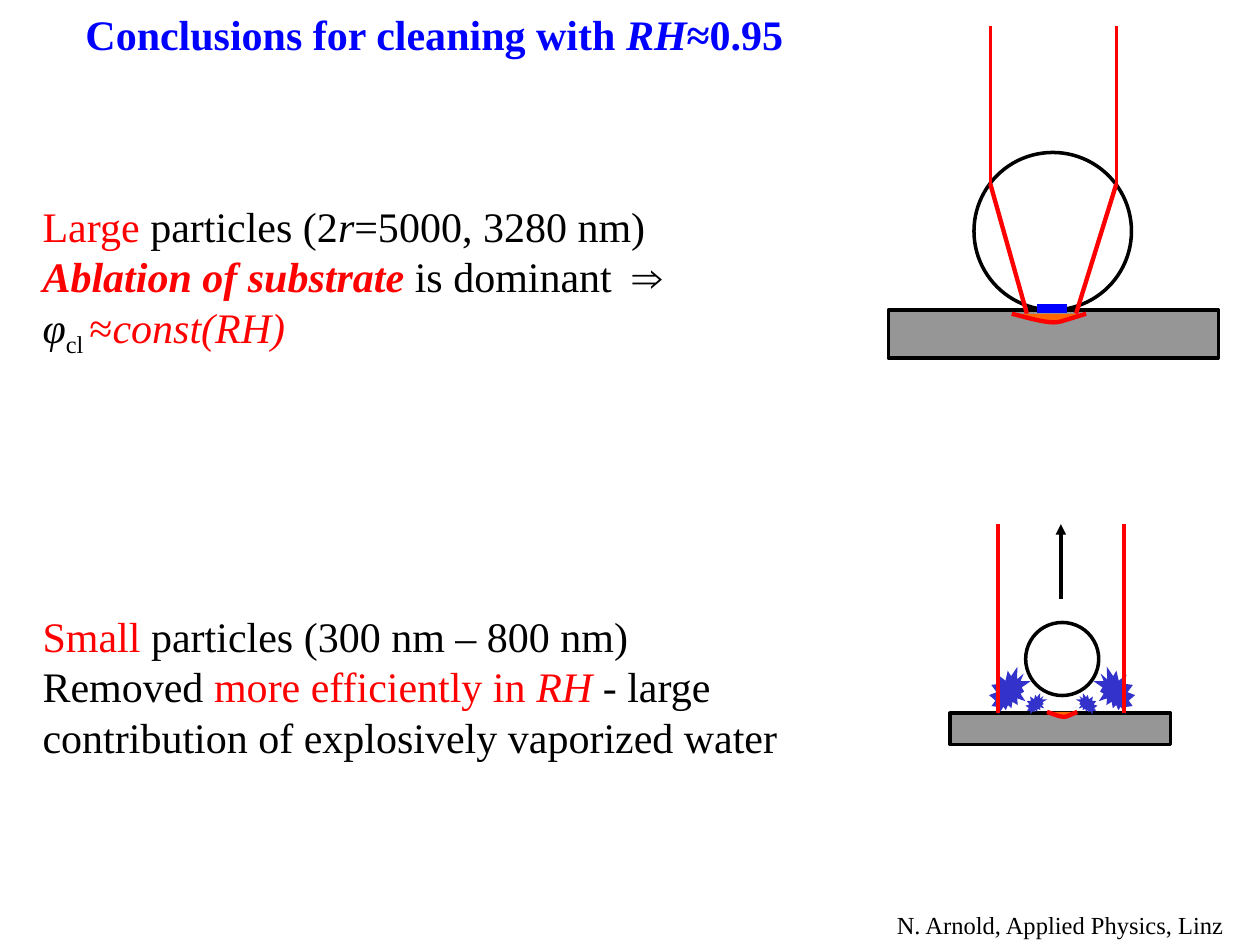
from lxml.etree import SubElement
from pptx import Presentation
from pptx.dml.color import RGBColor
from pptx.enum.shapes import MSO_CONNECTOR, MSO_SHAPE
from pptx.enum.text import PP_ALIGN
from pptx.oxml.ns import qn
from pptx.util import Inches, Pt

BLACK = RGBColor(0x00, 0x00, 0x00)
RED = RGBColor(0xFF, 0x00, 0x00)
BLUE = RGBColor(0x00, 0x00, 0xFF)
GREY = RGBColor(0x96, 0x96, 0x96)
ORANGE = RGBColor(0xFF, 0x66, 0x00)
WATER = RGBColor(0x33, 0x33, 0xCC)
FONT = "Times New Roman"

# A run is (text, colour, style): b bold, i italic, s subscript
TITLE = [[("Conclusions for cleaning with ", BLUE, "b"), ("RH", BLUE, "bi"), ("≈0.95", BLUE, "b")]]
FOOTER = [[("N. Arnold, Applied Physics, Linz", BLACK, "")]]
BODY = [
    [("Large", RED, ""), (" particles (2", BLACK, ""), ("r", BLACK, "i"),
     ("=5000, 3280 nm)", BLACK, "")],
    [("Ablation of substrate", RED, "bi"), (" is dominant  ⇒", BLACK, "")],
    [("φ", BLACK, "i"), ("cl ", BLACK, "s"), ("≈", RED, ""), ("const(RH)", RED, "i")],
    [("Small", RED, ""), (" particles (300 nm – 800 nm)", BLACK, "")],
    [("Removed ", BLACK, ""), ("more efficiently in ", RED, ""), ("RH", RED, "i"),
     (" - large contribution of explosively vaporized water", BLACK, "")],
]
SMALL_PARTICLES = 3  # paragraph that opens the second block

# Crater outline as shares of its width and depth: start, then Bézier segments
CRATER = [(0, 0), (0.19, 0.4), (0.37, 0.85), (0.51, 0.95), (0.63, 1.05), (0.68, 0.8),
          (0.75, 0.65), (0.83, 0.45), (0.92, 0.2), (1, 0)]

prs = Presentation()
prs.slide_width, prs.slide_height = Inches(10), Inches(7.5)
s = prs.slides.add_slide(prs.slide_layouts[6])


def text(paragraphs, x, y, w, h, size, align=PP_ALIGN.LEFT, wrap=True):
    tf = s.shapes.add_textbox(Inches(x), Inches(y), Inches(w), Inches(h)).text_frame
    tf.word_wrap = wrap
    for i, runs in enumerate(paragraphs):
        p = tf.paragraphs[0] if i == 0 else tf.add_paragraph()
        p.alignment = align
        p.font.size, p.font.name = Pt(size), FONT
        for words, colour, style in runs:
            r = p.add_run()
            r.text = words
            r.font.size, r.font.name = Pt(size), FONT
            r.font.color.rgb = colour
            r.font.bold, r.font.italic = "b" in style, "i" in style
            if "s" in style:
                r.font._element.set("baseline", "-25000")
    return tf


def paint(sp, fill=None, line=None, width=2):
    sp.shadow.inherit = False
    if fill is None:
        sp.fill.background()
    else:
        sp.fill.solid()
        sp.fill.fore_color.rgb = fill
    if line is None:
        sp.line.fill.background()
    else:
        sp.line.color.rgb, sp.line.width = line, Pt(width)


def shape(kind, x, y, w, h, fill=None, line=None, flip=False):
    sp = s.shapes.add_shape(kind, Inches(x), Inches(y), Inches(w), Inches(h))
    paint(sp, fill, line)
    if flip:
        sp._element.spPr.find(qn("a:xfrm")).set("flipH", "1")


def line(x1, y1, x2, y2, colour=RED, width=2, arrow=False):
    c = s.shapes.add_connector(MSO_CONNECTOR.STRAIGHT, Inches(x1), Inches(y1), Inches(x2), Inches(y2))
    c.line.color.rgb, c.line.width = colour, Pt(width)
    if arrow:
        SubElement(c.line._get_or_add_ln(), qn("a:tailEnd"), type="triangle")
    SubElement(c._element.spPr, qn("a:effectLst"))


def crater(x, y, w, depth, steps=8):
    """Molten pit in the substrate, traced along its Bézier segments."""
    points = []
    for i in range(0, len(CRATER) - 1, 3):
        for t in (n / steps for n in range(1, steps + 1)):
            weights = ((1 - t) ** 3, 3 * t * (1 - t) ** 2, 3 * t * t * (1 - t), t ** 3)
            u, v = (sum(k * q[axis] for k, q in zip(weights, CRATER[i:i + 4])) for axis in (0, 1))
            points.append((Inches(x + u * w), Inches(y + v * depth)))
    fb = s.shapes.build_freeform(Inches(x), Inches(y))
    fb.add_line_segments(points, close=False)
    paint(fb.convert_to_shape(), ORANGE, RED, 2.5)


text(FOOTER, 6.83, 7.17, 3.17, 0.25, 14, PP_ALIGN.CENTER)
text(TITLE, 0.58, 0.02, 5.74, 0.5, 24, wrap=False)
body = text(BODY, 0.24, 1.54, 6.67, 4.49, 24)
body.paragraphs[SMALL_PARTICLES].space_before = Pt(144)

# Large particle: the sphere focuses the beam into the substrate
shape(MSO_SHAPE.OVAL, 7.73, 1.21, 1.25, 1.25, line=BLACK)
shape(MSO_SHAPE.RECTANGLE, 7.05, 2.46, 2.62, 0.38, GREY, BLACK)
for beam, focus in ((7.86, 8.15), (8.86, 8.54)):
    line(beam, 0.21, beam, 1.46)
    line(beam, 1.46, focus, 2.49, width=2.5)
line(8.23, 2.45, 8.47, 2.45, BLUE, 5)
crater(8.03, 2.49, 0.59, 0.07)

# Small particle: vaporized water lifts it off
shape(MSO_SHAPE.RECTANGLE, 7.54, 5.66, 1.75, 0.25, GREY, BLACK)
shape(MSO_SHAPE.OVAL, 8.14, 4.94, 0.58, 0.58, line=BLACK)
line(8.42, 4.75, 8.42, 4.16, BLACK, arrow=True)
for left, right, y, w, h in ((7.85, 8.68, 5.29, 0.33, 0.38), (8.14, 8.54, 5.5, 0.17, 0.17)):
    shape(MSO_SHAPE.EXPLOSION2, left, y, w, h, WATER)
    shape(MSO_SHAPE.EXPLOSION2, right, y, w, h, WATER, flip=True)
for beam in (7.92, 8.92):
    line(beam, 4.16, beam, 5.66)
crater(8.31, 5.65, 0.24, 0.04)

prs.save("out.pptx")
